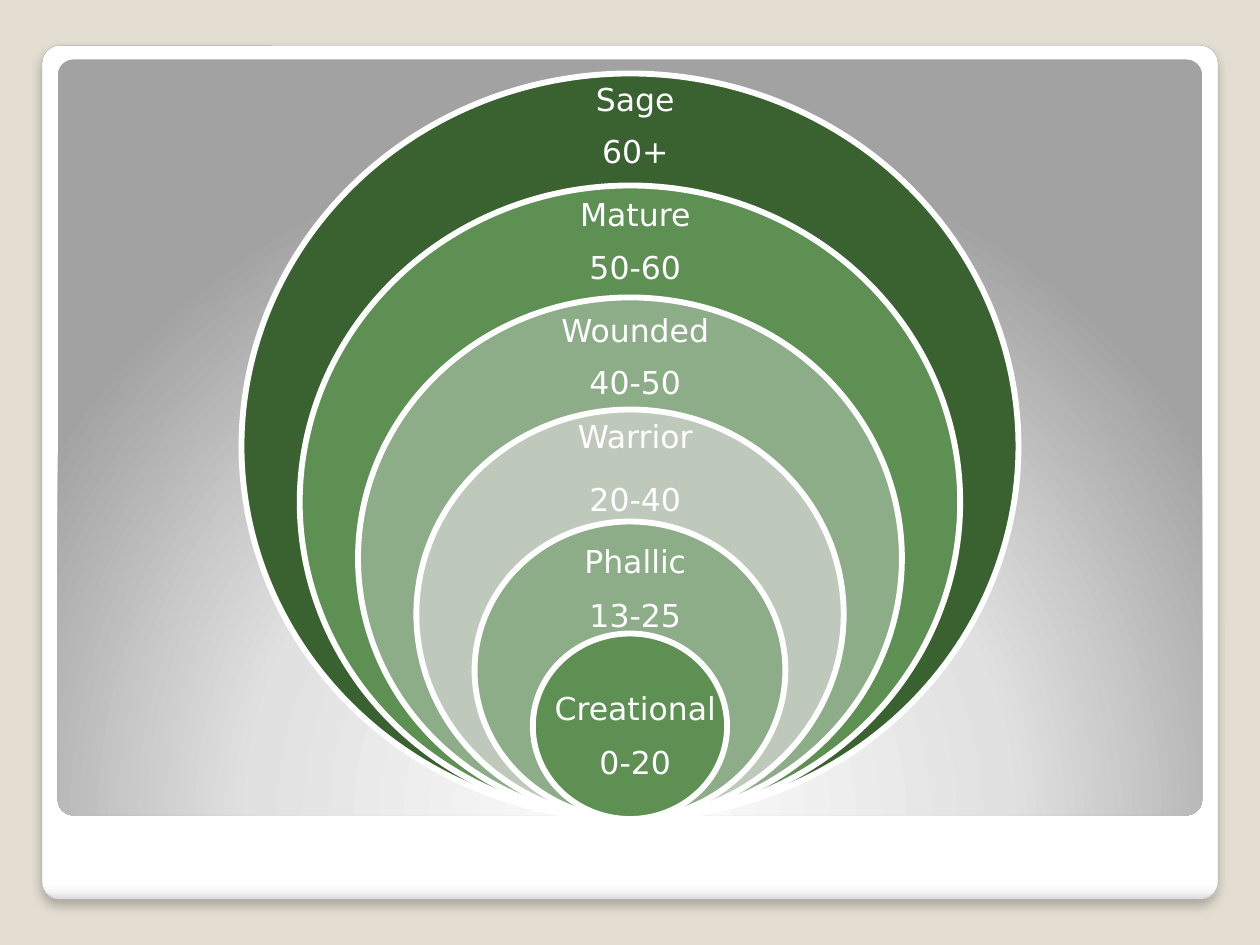
from dataclasses import dataclass

from pptx import Presentation
from pptx.dml.color import RGBColor
from pptx.enum.shapes import MSO_SHAPE as Kind
from pptx.enum.text import MSO_AUTO_SIZE as Fit, PP_ALIGN as Align
from pptx.oxml import parse_xml
from pptx.oxml.ns import nsdecls, qn
from pptx.util import Pt

FONT = "DejaVu Sans"
WHITE = "FFFFFF"
MID, BASE = 360, 468      # shared centre line and bottom of the rings
WIDE, HIGH = 444, 426     # outermost ring
STEP_W, STEP_H = 66.6, 64


@dataclass
class Stage:
    name: str
    ages: str
    fill: str
    name_top: float
    ages_top: float


STAGES = [
    Stage("Sage", "60+", "3A6231", 42, 72),
    Stage("Mature", "50-60", "5E9054", 108, 138),
    Stage("Wounded", "40-50", "8DAD88", 174, 204),
    Stage("Warrior", "20-40", "BEC9BC", 235, 271),
    Stage("Phallic", "13-25", "8DAD88", 306, 337),
    Stage("Creational", "0-20", "5E9054", 390, 421),
]


def paint(target, color: str) -> None:
    """Give a fill or line format one solid colour."""
    target.fill.solid()
    target.fill.fore_color.rgb = RGBColor.from_string(color)


def add_panel(shapes, box: tuple, stops: list, shade: str):
    """Draw a rounded panel with a gradient fill."""
    panel = shapes.add_shape(Kind.ROUNDED_RECTANGLE, *map(Pt, box))
    panel.adjustments[0] = 0.021
    panel.shadow.inherit = False
    panel.fill.solid()
    marks = "".join(
        f'<a:gs pos="{pos * 1000}"><a:srgbClr val="{color}"/></a:gs>'
        for pos, color in stops)
    props = panel.element.spPr
    props.replace(props.find(qn("a:solidFill")), parse_xml(
        f'<a:gradFill {nsdecls("a")} rotWithShape="1">'
        f"<a:gsLst>{marks}</a:gsLst>{shade}</a:gradFill>"))
    return panel


def add_ring(shapes, rank: int, stage: Stage) -> None:
    wide, high = WIDE - rank * STEP_W, HIGH - rank * STEP_H
    ring = shapes.add_shape(Kind.OVAL, Pt(MID - wide / 2), Pt(BASE - high),
                            Pt(wide), Pt(high))
    ring.shadow.inherit = False
    paint(ring, stage.fill)
    paint(ring.line, WHITE)
    ring.line.width = Pt(3.35)


def add_label(shapes, text: str, top: float) -> None:
    frame = shapes.add_textbox(Pt(282), Pt(top), Pt(162), Pt(29)).text_frame
    frame.word_wrap = True
    frame.auto_size = Fit.SHAPE_TO_FIT_TEXT
    frame.text = text
    para = frame.paragraphs[0]
    para.alignment = Align.CENTER
    font = para.runs[0].font
    font.name, font.size = FONT, Pt(18)
    font.color.rgb = RGBColor.from_string(WHITE)


def main() -> None:
    deck = Presentation()
    deck.slide_width, deck.slide_height = Pt(720), Pt(540)
    slide = deck.slides.add_slide(deck.slide_layouts[6])
    paint(slide.background, "E3DED1")
    shapes = slide.shapes

    # White card with a soft shadow
    card = add_panel(
        shapes, (24, 26, 672, 488),
        [(0, WHITE), (98, WHITE), (99, "F7F7F7"), (100, "DADADA")],
        '<a:lin ang="5400000" scaled="0"/>')
    paint(card.line, "A4A4A4")
    card.line.width = Pt(0.16)
    card.element.spPr.find(qn("a:effectLst")).append(parse_xml(
        f'<a:outerShdw {nsdecls("a")} blurRad="{Pt(6)}" dist="{Pt(4)}" '
        'dir="5400000" algn="t" rotWithShape="0"><a:srgbClr val="000000">'
        '<a:alpha val="25000"/></a:srgbClr></a:outerShdw>'))

    # Grey panel lit from below
    panel = add_panel(
        shapes, (33, 34, 654, 432),
        [(0, WHITE), (55, "E1E1E1"), (100, "A2A2A2")],
        '<a:path path="circle"><a:fillToRect l="50000" t="175000" '
        'r="50000" b="-75000"/></a:path>')
    panel.line.fill.background()

    # Nested rings, largest first
    rings = shapes.add_group_shape().shapes
    for rank, stage in enumerate(STAGES):
        add_ring(rings, rank, stage)

    # Stage names and ages
    for stage in STAGES:
        add_label(shapes, stage.name, stage.name_top)
        add_label(shapes, stage.ages, stage.ages_top)

    deck.save("out.pptx")


if __name__ == "__main__":
    main()
